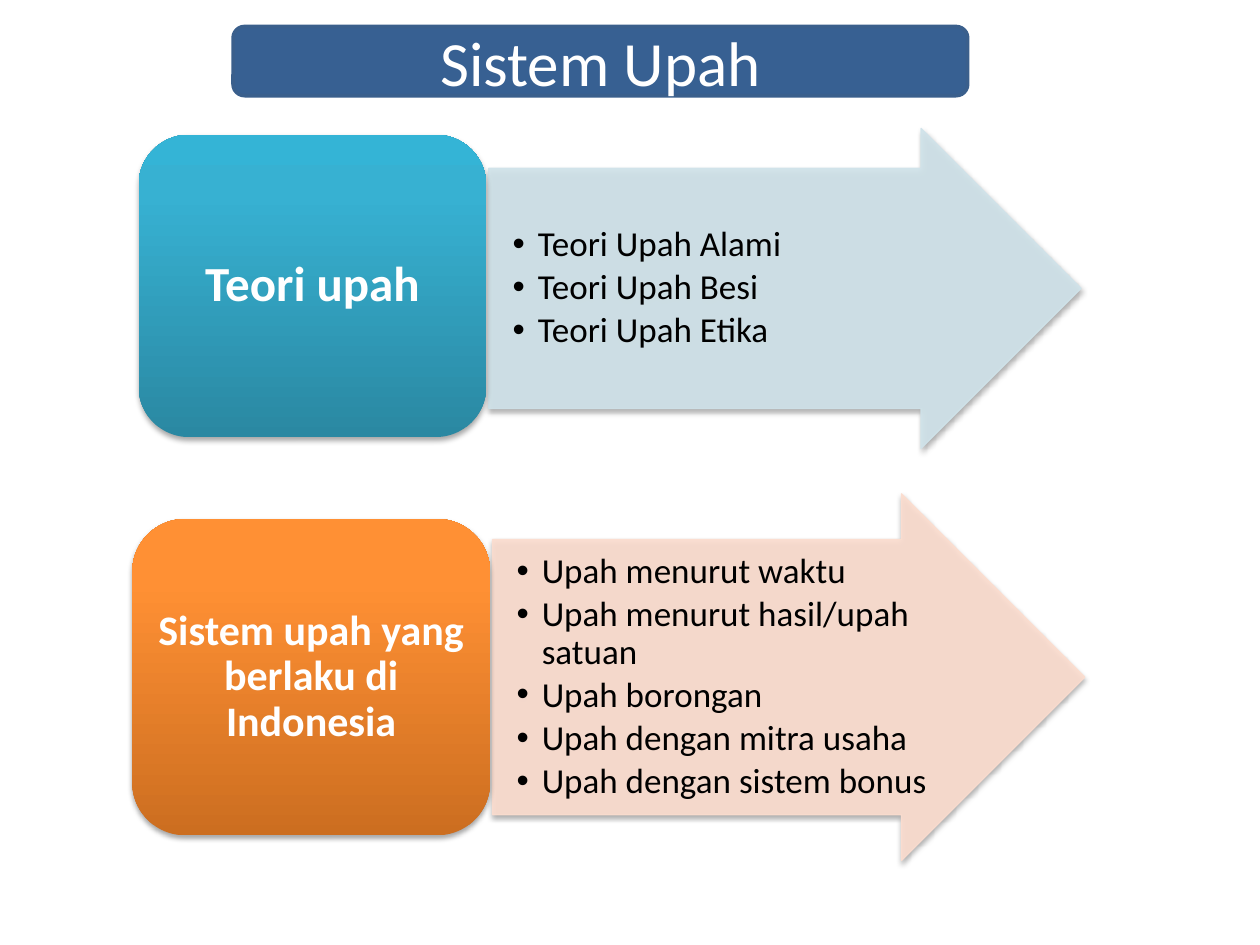
from copy import deepcopy

from lxml.etree import SubElement
from pptx import Presentation
from pptx.dml.color import RGBColor
from pptx.enum.shapes import MSO_SHAPE as SHAPE
from pptx.enum.text import MSO_ANCHOR as ANCHOR, PP_ALIGN as ALIGN
from pptx.oxml.ns import qn
from pptx.util import Pt

COLORS = {
    "white": "FFFFFF", "black": "000000",
    "title": "376092", "title_edge": "3A5F8C",
    "teal_pale": "D0E3EA", "orange_pale": "FCDDCF",
}
TEAL = ["2A88A2", "37B1D2", "34B4D6"]
ORANGE = ["CC6E20", "FF9034", "FF9136"]
STOPS = [0, 0.8, 1]


def rgb(name):
    return RGBColor.from_string(COLORS[name])


def add_block(slide, kind, left, top, width, height):
    block = slide.shapes.add_shape(kind, Pt(left), Pt(top), Pt(width), Pt(height))
    block.shadow.inherit = False
    return block


def add_shadow(block):
    effects = block._element.spPr.find(qn("a:effectLst"))
    shadow = SubElement(effects, qn("a:outerShdw"), blurRad=str(Pt(3.1)),
                        dist=str(Pt(1.8)), dir="5400000", rotWithShape="0")
    color = SubElement(shadow, qn("a:srgbClr"), val=COLORS["black"])
    SubElement(color, qn("a:alpha"), val="35000")


def fill_gradient(block, colors):
    block.fill.gradient()
    block.fill.gradient_angle = 90
    stop_list = block._element.spPr.find(qn("a:gradFill")).find(qn("a:gsLst"))
    stop_list.append(deepcopy(stop_list[0]))
    for stop, position, color in zip(block.fill.gradient_stops, STOPS, colors):
        stop.position = position
        stop.color.rgb = RGBColor.from_string(color)


def write(block, lines, size, color="white", bold=False, align=ALIGN.CENTER,
          spacing=1.0, after=0, margins=(0, 0), bullet=False):
    frame = block.text_frame
    frame.word_wrap = True
    frame.vertical_anchor = ANCHOR.MIDDLE
    frame.margin_left = frame.margin_right = Pt(margins[0])
    frame.margin_top = frame.margin_bottom = Pt(margins[1])
    for index, line in enumerate(lines):
        paragraph = frame.add_paragraph() if index else frame.paragraphs[0]
        paragraph.text = line
        paragraph.alignment = align
        paragraph.line_spacing = spacing
        paragraph.space_after = Pt(after)
        if bullet:
            props = paragraph._p.get_or_add_pPr()
            props.set("marL", str(Pt(27.4)))
            props.set("indent", str(Pt(-14.4)))
            SubElement(props, qn("a:buFont"), typeface="Arial")
            SubElement(props, qn("a:buChar"), char="•")
        font = paragraph.font
        font.name, font.size, font.bold = "Calibri", Pt(size), bold
        font.color.rgb = rgb(color)


def add_title(slide, left, top, width, height):
    title = add_block(slide, SHAPE.ROUNDED_RECTANGLE, left, top, width, height)
    title.fill.solid()
    title.fill.fore_color.rgb = rgb("title")
    title.line.color.rgb = rgb("title_edge")
    title.line.width = Pt(2)
    write(title, ["Sistem Upah"], 36, margins=(7.2, 3.6))


def add_topic(slide, left, top, width, height, card_size, card_drop,
              heading, heading_size, items, pale, gradient):
    """Arrow of items that starts at the right edge of a heading card."""
    card_width, card_height = card_size

    # Arrow with the items
    offset = card_width + 1.4
    arrow = add_block(slide, SHAPE.RIGHT_ARROW, left + offset, top, width - offset, height)
    arrow.adjustments[0], arrow.adjustments[1] = 0.75, 0.5
    arrow.fill.solid()
    arrow.fill.fore_color.rgb = rgb(pale)
    arrow.line.color.rgb = rgb(pale)
    arrow.line.width = Pt(0.75)
    for color in arrow._element.spPr.iter(qn("a:srgbClr")):
        SubElement(color, qn("a:alpha"), val="90000")
    add_shadow(arrow)
    write(arrow, items, 20, color="black", align=ALIGN.LEFT, spacing=0.9,
          after=3, margins=(0.7, 0.7), bullet=True)

    # Heading card
    card = add_block(slide, SHAPE.ROUNDED_RECTANGLE, left, top + card_drop,
                     card_width, card_height)
    fill_gradient(card, gradient)
    card.line.fill.background()
    add_shadow(card)
    write(card, [heading], heading_size, bold=True, spacing=0.9)


def main():
    deck = Presentation()
    deck.slide_width, deck.slide_height = Pt(720), Pt(540)
    slide = deck.slides.add_slide(deck.slide_layouts[6])

    add_topic(slide, 79.2, 73.4, 538.6, 182.9, (198.7, 172.8), 3.6,
              "Teori upah", 28,
              ["Teori Upah Alami", "Teori Upah Besi", "Teori Upah Etika"],
              "teal_pale", TEAL)
    add_topic(slide, 75.6, 282.2, 544.3, 209.5, (204.5, 180.7), 14.4,
              "Sistem upah yang berlaku di Indonesia", 24,
              ["Upah menurut waktu", "Upah menurut hasil/upah satuan",
               "Upah borongan", "Upah dengan mitra usaha",
               "Upah dengan sistem bonus"],
              "orange_pale", ORANGE)
    add_title(slide, 133.2, 15.1, 419.8, 39.6)

    deck.save("out.pptx")


if __name__ == "__main__":
    main()
